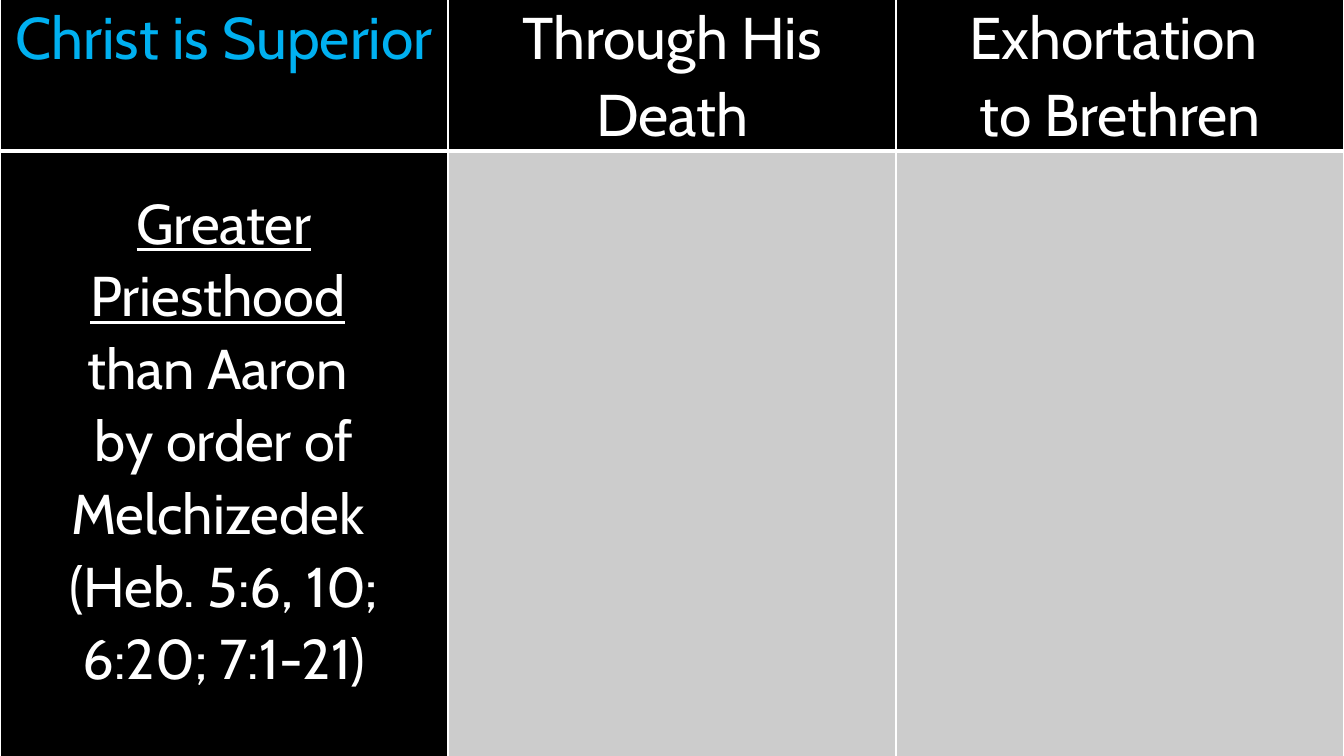
"""Build a slide comparing Christ's superiority, His death and the exhortation."""
from lxml import etree
from pptx import Presentation, util as u
from pptx.dml.color import RGBColor
from pptx.enum import text
from pptx.oxml.ns import qn

COLORS = {"black": "000000", "white": "FFFFFF", "accent": "00B0F0", "empty": "CCCCCC"}


def write_cell(cell, lines, size, color, top_gap):
    cell.margin_left = cell.margin_right = u.Inches(0.07)
    cell.margin_top, cell.margin_bottom = u.Inches(top_gap), 0
    cell.vertical_anchor = text.MSO_ANCHOR.TOP
    cell.text_frame.text = "\n".join(lines)
    for paragraph in cell.text_frame.paragraphs:
        paragraph.alignment = text.PP_ALIGN.CENTER
        paragraph.line_spacing = 1.07
        for run in paragraph.runs:
            run.font.name = "Cabin"
            run.font.size = u.Pt(size)
            run.font.bold = False
            run.font.color.rgb = RGBColor.from_string(COLORS[color])


def paint_cell(cell, fill, edge_widths):
    properties = cell._tc.get_or_add_tcPr()
    for edge, width in edge_widths.items():
        line = etree.SubElement(properties, qn(f"a:{edge}"), w=str(u.Pt(width)))
        solid = etree.SubElement(line, qn("a:solidFill"))
        etree.SubElement(solid, qn("a:srgbClr"), val=COLORS["white"])
    cell.fill.solid()
    cell.fill.fore_color.rgb = RGBColor.from_string(COLORS[fill])


deck = Presentation()
deck.slide_width, deck.slide_height = u.Inches(13.33), u.Inches(7.5)
slide = deck.slides.add_slide(deck.slide_layouts[6])
slide.background.fill.solid()
slide.background.fill.fore_color.rgb = RGBColor.from_string(COLORS["black"])

headings = [
    (["Christ is Superior"], "accent"),
    (["Through His Death"], "white"),
    (["Exhortation ", "to Brethren"], "white"),
]
priesthood = [
    "Greater Priesthood ",
    "than Aaron ",
    "by order of Melchizedek ",
    "(Heb. 5:6, 10; 6:20; 7:1-21)",
]
row_heights = [1.38, 6.33]

comparison = slide.shapes.add_table(
    len(row_heights), len(headings), 0, u.Inches(-0.2), deck.slide_width, u.Inches(8)
).table
for row, height in zip(comparison.rows, row_heights):
    row.height = u.Inches(height)

for column, (lines, color) in enumerate(headings):
    heading, body = comparison.cell(0, column), comparison.cell(1, column)
    write_cell(heading, lines, 42, color, 0.18)
    paint_cell(heading, "black", {"lnL": 1, "lnR": 1, "lnT": 1, "lnB": 3})
    paint_cell(body, "empty" if column else "black", {"lnL": 1, "lnR": 1, "lnT": 3, "lnB": 1})

argument = comparison.cell(1, 0)
write_cell(argument, priesthood, 40, "white", 0.34)
greater = argument.text_frame.paragraphs[0]
greater.runs[0].text = priesthood[0].rstrip()
greater.runs[0].font.underline = True
trailing = greater.add_run()
trailing.text = " "
trailing.font.name, trailing.font.size = "Cabin", u.Pt(40)

deck.save("out.pptx")
